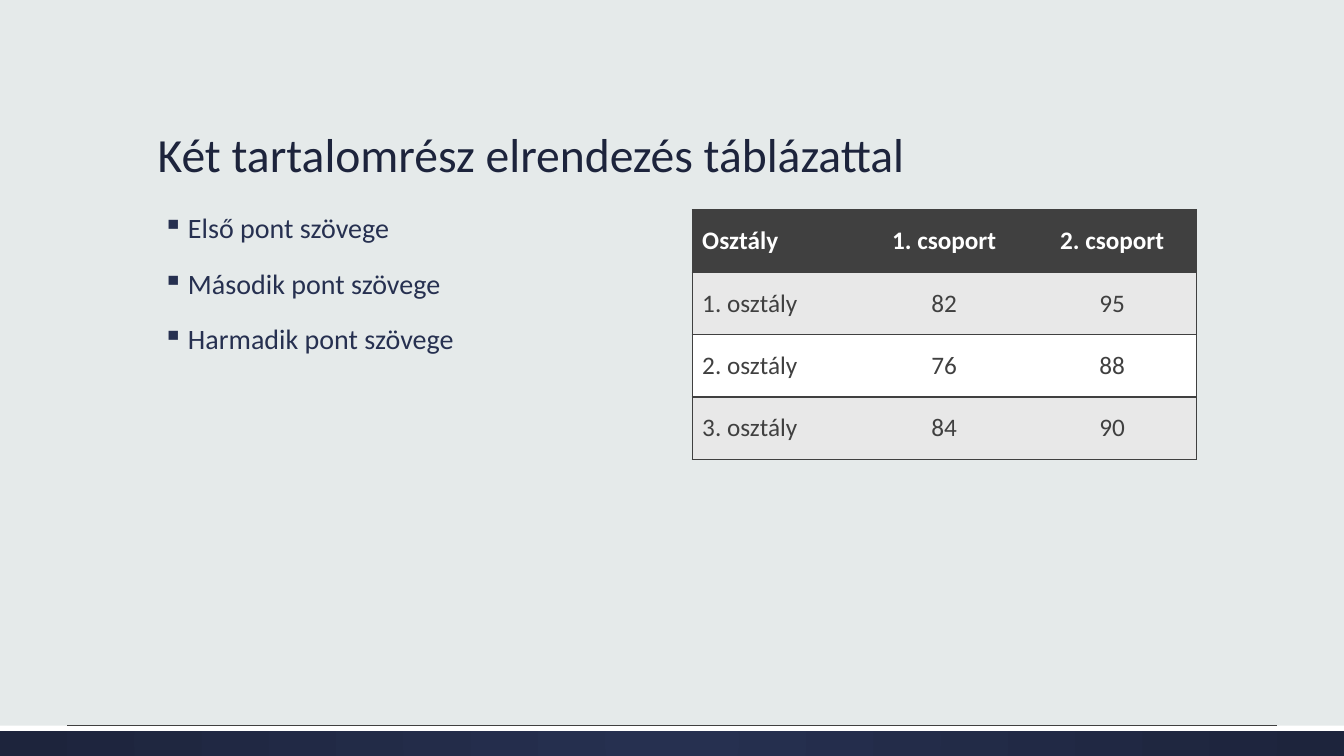
from dataclasses import dataclass

from pptx import Presentation
from pptx.dml.color import RGBColor
from pptx.enum.shapes import MSO_CONNECTOR, MSO_SHAPE
from pptx.enum.text import MSO_ANCHOR, PP_ALIGN
from pptx.oxml import parse_xml
from pptx.oxml.ns import nsdecls
from pptx.oxml.xmlchemy import OxmlElement
from pptx.util import Emu, Inches, Pt

WIDE, HIGH = Inches(13.33), Inches(7.5)
FONT = "Calibri"
NAVY, BLUE, GREY, PALE, WHITE = "1D243C", "263050", "404040", "E8E8E8", "FFFFFF"

POINTS = ["Első pont szövege", "Második pont szövege", "Harmadik pont szövege"]
GRID = [
    ["Osztály", "1. csoport", "2. csoport"],
    ["1. osztály", "82", "95"],
    ["2. osztály", "76", "88"],
    ["3. osztály", "84", "90"],
]


@dataclass
class Box:
    """An area on a grid of 100 columns by 100 rows."""
    col: float
    row: float
    cols: float
    rows: float

    def place(self) -> tuple:
        return (Emu(int(WIDE * self.col / 100)), Emu(int(HIGH * self.row / 100)),
                Emu(int(WIDE * self.cols / 100)), Emu(int(HIGH * self.rows / 100)))


@dataclass
class Style:
    size: float
    tint: str
    bold: bool = False


def color(code: str) -> RGBColor:
    return RGBColor.from_string(code)


def format_runs(para, style: Style) -> None:
    for run in para.runs:
        font = run.font
        font.name, font.size, font.bold = FONT, Pt(style.size), style.bold
        font.color.rgb = color(style.tint)


def add_bar(slide, box: Box, tint: str):
    bar = slide.shapes.add_shape(MSO_SHAPE.RECTANGLE, *box.place())
    bar.shadow.inherit = False
    bar.fill.solid()
    bar.fill.fore_color.rgb = color(tint)
    bar.line.fill.background()
    return bar


def add_glow(bar, inner: str, outer: str) -> None:
    stops = "".join(f'<a:gs pos="{pos}"><a:srgbClr val="{tint}"/></a:gs>'
                    for pos, tint in ((0, inner), (100000, outer)))
    glow = parse_xml(
        f'<a:gradFill {nsdecls("a")} rotWithShape="1"><a:gsLst>{stops}</a:gsLst>'
        '<a:path path="circle"><a:fillToRect l="50000" t="50000" r="50000" b="50000"/>'
        '</a:path></a:gradFill>')
    props = bar.fill._xPr
    props.replace(props.solidFill, glow)


def add_rule(slide, box: Box, tint: str) -> None:
    left, top, width, _ = box.place()
    rule = slide.shapes.add_connector(MSO_CONNECTOR.STRAIGHT, left, top, left + width, top)
    rule.line.color.rgb = color(tint)
    rule.line.width = Pt(0.75)
    rule._element.spPr.append(OxmlElement("a:effectLst"))


def add_text(slide, box: Box, lines: list[str], style: Style, anchor=MSO_ANCHOR.TOP):
    frame = slide.shapes.add_textbox(*box.place()).text_frame
    frame.word_wrap = True
    frame.vertical_anchor = anchor
    frame.text = "\n".join(lines)
    for para in frame.paragraphs:
        para.line_spacing = 0.9
        format_runs(para, style)
    return frame


def add_bullet(para, tint: str) -> None:
    para.space_before = Pt(18)
    props = para._p.get_or_add_pPr()
    props.set("marL", str(Inches(0.3)))
    props.set("indent", str(-Inches(0.25)))
    props.append(parse_xml(f'<a:buClr {nsdecls("a")}><a:srgbClr val="{tint}"/></a:buClr>'))
    props.append(parse_xml(f'<a:buChar {nsdecls("a")} char="▪"/>'))


def set_edges(cell, drawn: str) -> None:
    """Draw the named sides of a cell and hide the others."""
    props = cell._tc.get_or_add_tcPr()
    for spot, side in enumerate("LRTB"):
        fill = (f'<a:solidFill><a:srgbClr val="{GREY}"/></a:solidFill>'
                if side in drawn else "<a:noFill/>")
        props.insert(spot, parse_xml(
            f'<a:ln{side} {nsdecls("a")} w="{Pt(1)}">{fill}</a:ln{side}>'))


def add_grid(slide, box: Box, data: list[list[str]]) -> None:
    last = len(data[0]) - 1
    table = slide.shapes.add_table(len(data), last + 1, *box.place()).table
    for i, row in enumerate(data):
        style = Style(18, GREY) if i else Style(18, WHITE, True)
        back = (PALE if i % 2 else WHITE) if i else GREY
        for j, text in enumerate(row):
            cell = table.cell(i, j)
            cell.text = text
            cell.vertical_anchor = MSO_ANCHOR.MIDDLE
            cell.fill.solid()
            cell.fill.fore_color.rgb = color(back)
            para = cell.text_frame.paragraphs[0]
            para.alignment = PP_ALIGN.CENTER if j else PP_ALIGN.LEFT
            format_runs(para, style)
            set_edges(cell, "TB" + ("" if j else "L") + ("R" if j == last else ""))


def main() -> None:
    deck = Presentation()
    deck.slide_width, deck.slide_height = WIDE, HIGH
    slide = deck.slides.add_slide(deck.slide_layouts[6])
    slide.background.fill.solid()
    slide.background.fill.fore_color.rgb = color("E5EAEA")

    # Footer band
    band = add_bar(slide, Box(0, 96, 100, 4), BLUE)
    add_glow(band, BLUE, NAVY)
    add_bar(slide, Box(0, 96, 100, 0.67), WHITE)
    add_rule(slide, Box(5, 95.92, 90, 0), GREY)

    # Title and bullet points
    add_text(slide, Box(11, 6.8, 78, 18), ["Két tartalomrész elrendezés táblázattal"],
             Style(34, NAVY), MSO_ANCHOR.BOTTOM)
    body = add_text(slide, Box(11, 27.73, 37.5, 60.13), POINTS, Style(20, BLUE))
    for para in body.paragraphs:
        add_bullet(para, BLUE)

    # Table of results
    add_grid(slide, Box(51.5, 27.73, 37.5, 33.07), GRID)

    deck.save("out.pptx")


if __name__ == "__main__":
    main()
